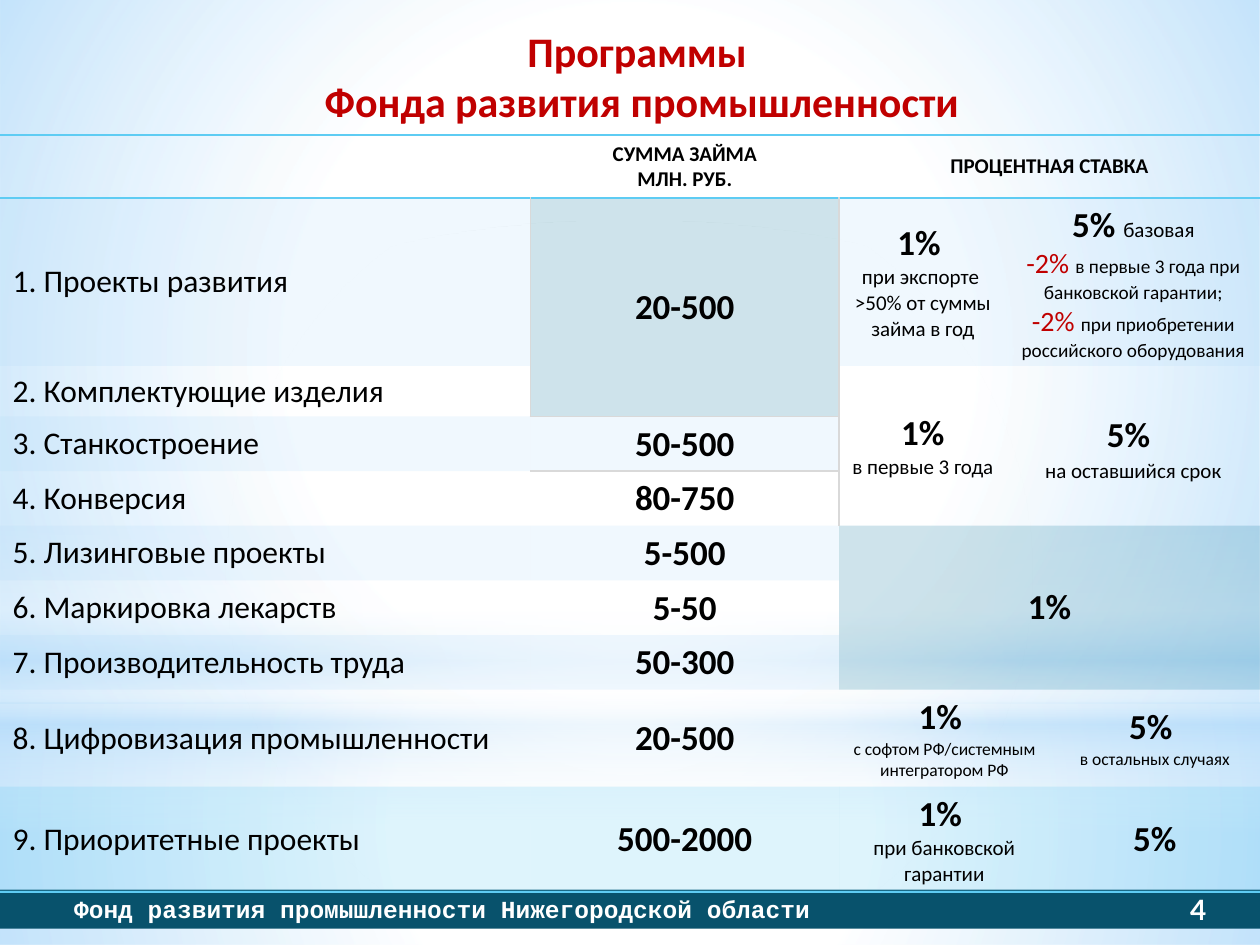
from pptx import Presentation
from pptx.dml.color import RGBColor
from pptx.enum.shapes import MSO_SHAPE as Shape
from pptx.enum.text import MSO_ANCHOR as Anchor, MSO_AUTO_SIZE as AutoSize, PP_ALIGN as Align
from pptx.oxml import parse_xml
from pptx.oxml.ns import nsdecls, qn
from pptx.util import Inches, Pt

RED, BLACK, WHITE = "C00000", "000000", "FFFFFF"
PALE, SKY, TEAL, GREY = "B4DCFA", "5ECCF3", "0C779D", "D9D9D9"


def style(font, name, size, colour, bold):
    font.name, font.size, font.bold = name, Pt(size), bold
    font.color.rgb = RGBColor.from_string(colour)


def add_plain_shape(kind, box):
    """Add a shape without line or shadow; box is left, top, width, height in inches."""
    shape = page.shapes.add_shape(kind, *map(Inches, box))
    shape.shadow.inherit = False
    shape.line.fill.background()
    return shape


deck = Presentation()
deck.slide_width, deck.slide_height = Inches(10), Inches(7.5)
layout = deck.slide_layouts[5]
page = deck.slides.add_slide(layout)

# Background glow on the layout: stops are position, colour, opacity in percent
CIRCLE = '<a:path path="circle"><a:fillToRect l="50000" t="50000" r="50000" b="50000"/></a:path>'
DOWN = '<a:lin ang="5400000" scaled="0"/>'
glows = [
    (Shape.RECTANGLE, (0, 5.58, 10, 1.92), CIRCLE,
     [(0, WHITE, 91), (37, WHITE, 76), (100, PALE, 79)]),
    (Shape.RECTANGLE, (0, 0, 10, 5.58), CIRCLE,
     [(0, WHITE, 89), (48, WHITE, 62), (100, PALE, 79)]),
    (Shape.RECTANGLE, (0, 4.12, 10, 2.5), DOWN,
     [(0, WHITE, 0), (29, WHITE, 30), (45, PALE, 40), (55, WHITE, 26), (65, PALE, 60),
      (100, WHITE, 0)]),
    (Shape.OVAL, (0, 1.75, 10, 5.58), CIRCLE, [(0, WHITE, 100), (56, WHITE, 0)]),
]
for index, (kind, box, direction, stops) in enumerate(glows):
    glow = add_plain_shape(kind, box)
    glow.fill.background()
    stop_xml = "".join(
        f'<a:gs pos="{place * 1000}"><a:srgbClr val="{colour}">'
        f'<a:alpha val="{opacity * 1000}"/></a:srgbClr></a:gs>'
        for place, colour, opacity in stops)
    gradient = parse_xml(f'<a:gradFill {nsdecls("a")} rotWithShape="1">'
                         f'<a:gsLst>{stop_xml}</a:gsLst>{direction}</a:gradFill>')
    properties = glow.element.spPr
    properties.replace(properties.find(qn("a:noFill")), gradient)
    glow.element.xpath("p:nvSpPr/p:cNvPr")[0].set("id", str(100 + index))
    layout.shapes.element.insert(2 + index, glow.element)

# Title
title = page.shapes.title
title.left, title.top, title.width, title.height = map(Inches, (0.41, 0.15, 9.37, 0.91))
frame = title.text_frame
frame.text = "Программы \nФонда развития промышленности"
frame.vertical_anchor = Anchor.TOP
frame.auto_size = AutoSize.SHAPE_TO_FIT_TEXT
for para in frame.paragraphs:
    para.alignment = Align.CENTER
    style(para.runs[0].font, "Calibri", 24, RED, True)

# Footer bar and page number
bar = add_plain_shape(Shape.RECTANGLE, (0, 7.06, 10, 0.31))
bar.fill.solid()
bar.fill.fore_color.rgb = RGBColor.from_string("08526C")
number = page.shapes.add_textbox(*map(Inches, (9.02, 7.02, 0.98, 0.4)))
footer_parts = [
    (bar, "Фонд развития промышленности Нижегородской области", "Courier New", 14, Align.LEFT),
    (number, "4", "Lato", 16, Align.CENTER),
]
for shape, text, font_name, size, align in footer_parts:
    frame = shape.text_frame
    frame.word_wrap = True
    frame.vertical_anchor = Anchor.MIDDLE
    frame.text = text
    para = frame.paragraphs[0]
    para.alignment = align
    style(para.runs[0].font, font_name, size, WHITE, True)
bar.text_frame.paragraphs[0]._p.get_or_add_pPr().set("indent", str(Inches(0.49)))

# Programme table
widths = [4.21, 2.45, 1.33, 0.34, 1.67]
heights = [0.5, 1.33, 0.4] + [0.43] * 5 + [0.77, 0.81]
holder = page.shapes.add_table(len(heights), len(widths), Inches(0), Inches(1.07),
                               Inches(10), Inches(6))
NO_STYLE_NO_GRID = "{2D5ABB26-0587-4C30-8999-92F81FD0307C}"
holder.element.xpath(".//a:tableStyleId")[0].text = NO_STYLE_NO_GRID
table = holder.table
table.first_row = table.horz_banding = False
for column, width in zip(table.columns, widths):
    column.width = Inches(width)
for row, height in zip(table.rows, heights):
    row.height = Inches(height)

programmes = [
    ("1. Проекты развития", "20-500"), ("2. Комплектующие изделия", None),
    ("3. Станкостроение", "50-500"), ("4. Конверсия", "80-750"),
    ("5. Лизинговые проекты", "5-500"), ("6. Маркировка лекарств", "5-50"),
    ("7. Производительность труда", "50-300"),
    ("8. Цифровизация промышленности", "20-500"), ("9. Приоритетные проекты", "500-2000"),
]
# Cell contents: paragraphs of (text, size[, colour]) spans
contents = {
    (0, 1): [[("СУММА ЗАЙМА", 12)], [("МЛН. РУБ.", 12)]],
    (0, 2): [[("ПРОЦЕНТНАЯ СТАВКА", 12)]],
    (1, 2): [[("1% ", 20)], [("при экспорте ", 12)], [(">50% от суммы займа в год", 12)]],
    (1, 3): [[("5% ", 20), ("базовая", 12)],
             [("-2% ", 16, RED), ("в первые 3 года при банковской гарантии;", 11)],
             [("-2% ", 16, RED), ("при приобретении российского оборудования", 11)]],
    (2, 2): [[("1%", 20)], [("в первые 3 года", 12)]],
    (2, 3): [[("5%", 20), (" ", 24)], [("на оставшийся срок", 12)]],
    (5, 2): [[("1%", 20)]],
    (8, 2): [[("1% ", 20)], [("с софтом РФ/системным интегратором РФ", 10)]],
    (8, 4): [[("5% ", 20)], [("в остальных случаях", 10)]],
    (9, 2): [[("1% ", 20)], [("при банковской гарантии", 12)]],
    (9, 4): [[("5%", 20)]],
}
for r, (name, amount) in enumerate(programmes, 1):
    contents[r, 0] = [[(name, 18)]]
    if amount:
        contents[r, 1] = [[(amount, 20)]]

for first, last in [((0, 2), (0, 4)), ((1, 1), (2, 1)), ((1, 3), (1, 4)), ((2, 2), (4, 2)),
                    ((2, 3), (4, 4)), ((5, 2), (7, 4)), ((8, 2), (8, 3)), ((9, 2), (9, 3))]:
    table.cell(*first).merge(table.cell(*last))

for (r, c), paragraphs in contents.items():
    frame = table.cell(r, c).text_frame
    for index, spans in enumerate(paragraphs):
        para = frame.add_paragraph() if index else frame.paragraphs[0]
        para.alignment = Align.CENTER if c else Align.LEFT
        for text, size, *colour in spans:
            span = para.add_run()
            span.text = text
            style(span.font, "Calibri", size, colour[0] if colour else BLACK,
                  r == 0 or size == 20)

# Fills and borders
for r in range(len(heights)):
    for c in range(len(widths)):
        cell = table.cell(r, c)
        cell.vertical_anchor = Anchor.MIDDLE
        if (c == 1 and r in (1, 2)) or (c >= 2 and r in (5, 6, 7)):
            colour = TEAL
        elif r == 9:
            colour = SKY
        elif r == 1 or (r % 2 and c < 2):
            colour = PALE
        else:
            colour = None
        cell_properties = cell._tc.get_or_add_tcPr()
        if colour:
            cell.fill.solid()
            cell.fill.fore_color.rgb = RGBColor.from_string(colour)
            cell_properties.xpath(".//a:srgbClr")[0].append(
                parse_xml(f'<a:alpha {nsdecls("a")} val="20000"/>'))
        else:
            cell.fill.background()

        borders = {}
        if c == 0 and r in (1, 2):
            borders["R"] = GREY
        if c == 1 and 1 <= r <= 4:
            borders["R"] = GREY
            if r <= 2:
                borders["L"] = GREY
            if r == 3:
                borders["T"] = GREY
            if r in (2, 3):
                borders["B"] = GREY
        if r == 0:
            borders["T"] = SKY
        if r in (0, 9):
            borders["B"] = SKY
        sides = [side for side in "LRTB" if side in borders]
        for index, side in enumerate(sides):
            cell_properties.insert(index, parse_xml(
                f'<a:ln{side} {nsdecls("a")} w="12700"><a:solidFill>'
                f'<a:srgbClr val="{borders[side]}"/></a:solidFill></a:ln{side}>'))

deck.save("out.pptx")
